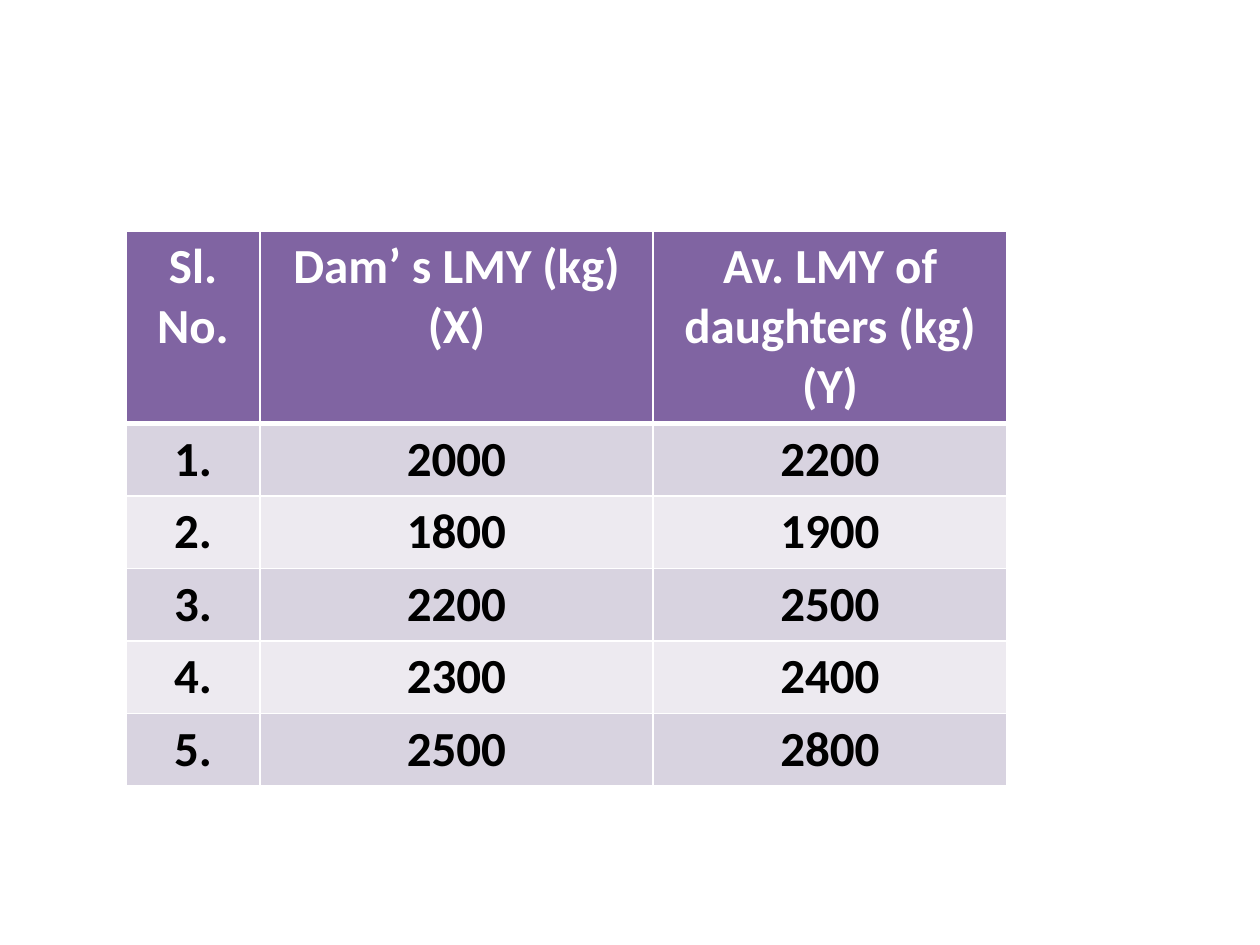
from lxml.etree import SubElement
from pptx import Presentation
from pptx.dml.color import RGBColor
from pptx.enum.text import PP_ALIGN as Align
from pptx.oxml.ns import qn
from pptx.util import Pt

PX = 914400 // 126
WHITE = RGBColor(0xFF, 0xFF, 0xFF)
BLACK = RGBColor(0x00, 0x00, 0x00)
PURPLE = RGBColor(0x80, 0x64, 0xA2)
BANDS = (RGBColor(0xD8, 0xD3, 0xE0), RGBColor(0xED, 0xEA, 0xF0))

HEADER = ("Sl. No.", "Dam’ s LMY (kg) (X)", "Av. LMY of daughters (kg) (Y)")
MILK_YIELDS = ((2000, 2200), (1800, 1900), (2200, 2500), (2300, 2400), (2500, 2800))


class SlideBuilder:
    def __init__(self, slide):
        self.slide = slide
        self.font_format = {"name": "Calibri", "size": Pt(28), "bold": True}

    def border(self, cell, side, width):
        line = SubElement(cell._tc.get_or_add_tcPr(), qn(f"a:ln{side}"), w=str(Pt(width)))
        fill = SubElement(line, qn("a:solidFill"))
        SubElement(fill, qn("a:srgbClr"), val=str(WHITE))

    def cell(self, cell, text, fill, color, top=1, bottom=1):
        # Borders precede the fill in the cell properties
        for side, width in {"L": 1, "R": 1, "T": top, "B": bottom}.items():
            self.border(cell, side, width)
        cell.fill.solid()
        cell.fill.fore_color.rgb = fill
        cell.text = text
        paragraph = cell.text_frame.paragraphs[0]
        paragraph.alignment = Align.CENTER
        font = paragraph.runs[0].font
        for name, value in self.font_format.items():
            setattr(font, name, value)
        font.color.rgb = color

    def table(self, left, top, widths, heights, rows):
        """Add a table with a header row and alternating body bands."""
        frame = self.slide.shapes.add_table(
            len(rows), len(widths), left * PX, top * PX, sum(widths) * PX, sum(heights) * PX)
        table = frame.table
        for column, width in zip(table.columns, widths):
            column.width = width * PX
        for index, (row, height, texts) in enumerate(zip(table.rows, heights, rows)):
            row.height = height * PX
            if index == 0:
                style = {"fill": PURPLE, "color": WHITE, "bottom": 3}
            else:
                style = {"fill": BANDS[(index - 1) % 2], "color": BLACK,
                         "top": 3 if index == 1 else 1}
            for cell, text in zip(row.cells, texts):
                self.cell(cell, text, **style)


def main():
    presentation = Presentation()
    presentation.slide_width = 1260 * PX
    presentation.slide_height = 945 * PX
    builder = SlideBuilder(presentation.slides.add_slide(presentation.slide_layouts[6]))
    body = [(f"{number}.", str(dam), str(daughters))
            for number, (dam, daughters) in enumerate(MILK_YIELDS, 1)]
    builder.table(126, 231, (134, 393, 354), [186] + [72] * len(body), [HEADER, *body])
    presentation.save("out.pptx")


if __name__ == "__main__":
    main()
